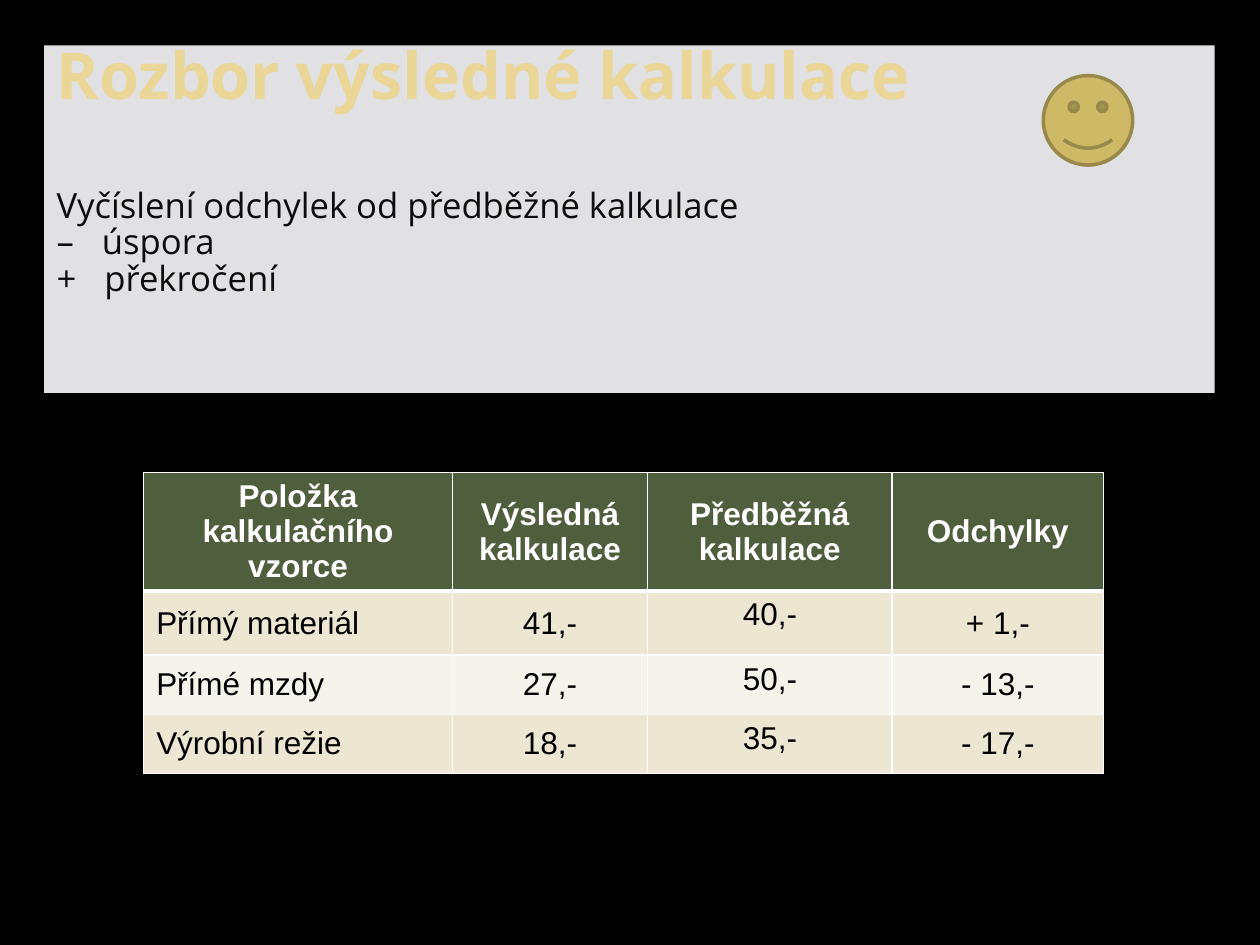
from dataclasses import dataclass
from typing import NamedTuple

from lxml.etree import SubElement
from pptx import Presentation
from pptx.dml.color import RGBColor
from pptx.enum.shapes import MSO_SHAPE
from pptx.enum.text import MSO_ANCHOR, PP_ALIGN
from pptx.oxml.ns import qn
from pptx.util import Inches, Pt


@dataclass(frozen=True)
class Theme:
    background: str = "000000"
    panel: str = "E1E0E2"
    title: str = "EAD696"
    body: str = "0D0D0D"
    smiley: str = "CEB966"
    smiley_line: str = "98894B"
    header: str = "4F5E3C"
    header_text: str = "FFFFFF"
    bands: tuple[str, str] = ("EDE6D3", "F6F3EA")
    cell_text: str = "000000"
    border: str = "FFFFFF"
    heading_font: str = "Open Sans"
    table_font: str = "Arial"
    title_size: float = 36.9
    body_size: float = 19.8
    table_size: float = 18


class TextStyle(NamedTuple):
    font: str
    size: float
    color: str
    bold: bool = False


class PanelLine(NamedTuple):
    text: str
    style: TextStyle
    space_after: float = 0
    hanging: float = 0


class Box(NamedTuple):
    left: float
    top: float
    width: float
    height: float


THEME = Theme()
TITLE = TextStyle(THEME.heading_font, THEME.title_size, THEME.title, True)
BODY = TextStyle(THEME.heading_font, THEME.body_size, THEME.body)
HEADER = TextStyle(THEME.table_font, THEME.table_size, THEME.header_text, True)
CELL = TextStyle(THEME.table_font, THEME.table_size, THEME.cell_text)

PANEL_LINES = [
    PanelLine("Rozbor výsledné kalkulace", TITLE, space_after=43),
    PanelLine("Vyčíslení odchylek od předběžné kalkulace", BODY),
    PanelLine("–\túspora", BODY, hanging=0.36),
    PanelLine("+\tpřekročení", BODY, hanging=0.38),
]
COSTING_ROWS = [
    ["Položka\nkalkulačního vzorce", "Výsledná kalkulace", "Předběžná kalkulace", "Odchylky"],
    ["Přímý materiál", "41,-", "40,-", "+ 1,-"],
    ["Přímé mzdy", "27,-", "50,-", "- 13,-"],
    ["Výrobní režie", "18,-", "35,-", "- 17,-"],
]
COLUMN_WIDTHS = [2.45, 1.55, 1.94, 1.68]
ROW_HEIGHTS = [0.83, 0.51, 0.47, 0.47]
ITEM_COLUMN, PLANNED_COLUMN = 0, 2


def rgb(color: str) -> RGBColor:
    return RGBColor.from_string(color)


def add_run(paragraph, text: str, style: TextStyle) -> None:
    run = paragraph.add_run()
    run.text = text
    run.font.name = style.font
    run.font.size = Pt(style.size)
    run.font.bold = style.bold
    run.font.color.rgb = rgb(style.color)


def next_paragraph(frame, index: int):
    return frame.add_paragraph() if index else frame.paragraphs[0]


def add_filled_shape(slide, kind: MSO_SHAPE, box: Box, fill: str):
    shape = slide.shapes.add_shape(kind, *map(Inches, box))
    shape.shadow.inherit = False
    shape.fill.solid()
    shape.fill.fore_color.rgb = rgb(fill)
    return shape


def draw_panel(slide, box: Box, lines: list[PanelLine]) -> None:
    panel = add_filled_shape(slide, MSO_SHAPE.RECTANGLE, box, THEME.panel)
    panel.line.fill.background()
    frame = panel.text_frame
    frame.word_wrap = True
    frame.vertical_anchor = MSO_ANCHOR.TOP
    frame.margin_top = Inches(0)
    for index, line in enumerate(lines):
        paragraph = next_paragraph(frame, index)
        paragraph.alignment = PP_ALIGN.LEFT
        paragraph.line_spacing = 0.88
        paragraph.space_after = Pt(line.space_after)
        if line.hanging:
            properties = paragraph._p.get_or_add_pPr()
            properties.set("marL", str(Inches(line.hanging)))
            properties.set("indent", str(-Inches(line.hanging)))
        add_run(paragraph, line.text, line.style)


def draw_smiley(slide, box: Box) -> None:
    smiley = add_filled_shape(slide, MSO_SHAPE.SMILEY_FACE, box, THEME.smiley)
    smiley.line.color.rgb = rgb(THEME.smiley_line)
    smiley.line.width = Pt(2)


def set_borders(cell, top: float, bottom: float) -> None:
    properties = cell._tc.get_or_add_tcPr()
    for side, width in {"lnL": 1, "lnR": 1, "lnT": top, "lnB": bottom}.items():
        border = SubElement(properties, qn(f"a:{side}"), w=str(Pt(width)))
        fill = SubElement(border, qn("a:solidFill"))
        SubElement(fill, qn("a:srgbClr"), val=THEME.border)


def fill_cell(cell, text: str, row: int, column: int) -> None:
    is_header = row == 0
    set_borders(cell, top=3 if row == 1 else 1, bottom=3 if is_header else 1)
    cell.fill.solid()
    cell.fill.fore_color.rgb = rgb(THEME.header if is_header else THEME.bands[(row - 1) % 2])
    at_top = column == PLANNED_COLUMN and not is_header
    cell.vertical_anchor = MSO_ANCHOR.TOP if at_top else MSO_ANCHOR.MIDDLE
    at_left = column == ITEM_COLUMN and not is_header
    for index, line in enumerate(text.split("\n")):
        paragraph = next_paragraph(cell.text_frame, index)
        paragraph.alignment = PP_ALIGN.LEFT if at_left else PP_ALIGN.CENTER
        add_run(paragraph, line, HEADER if is_header else CELL)


def draw_costing_table(slide, left: float, top: float) -> None:
    box = Box(left, top, sum(COLUMN_WIDTHS), sum(ROW_HEIGHTS))
    table = slide.shapes.add_table(
        len(ROW_HEIGHTS), len(COLUMN_WIDTHS), *map(Inches, box)
    ).table
    for column, width in zip(table.columns, COLUMN_WIDTHS):
        column.width = Inches(width)
    for row, height in zip(table.rows, ROW_HEIGHTS):
        row.height = Inches(height)
    for row_index, texts in enumerate(COSTING_ROWS):
        for column_index, text in enumerate(texts):
            fill_cell(table.cell(row_index, column_index), text, row_index, column_index)


def main() -> None:
    presentation = Presentation()
    presentation.slide_width = Inches(10)
    presentation.slide_height = Inches(7.5)
    slide = presentation.slides.add_slide(presentation.slide_layouts[6])
    slide.background.fill.solid()
    slide.background.fill.fore_color.rgb = rgb(THEME.background)
    draw_costing_table(slide, 1.14, 3.75)
    draw_panel(slide, Box(0.35, 0.36, 9.29, 2.76), PANEL_LINES)
    draw_smiley(slide, Box(8.28, 0.6, 0.71, 0.71))
    presentation.save("out.pptx")


if __name__ == "__main__":
    main()
